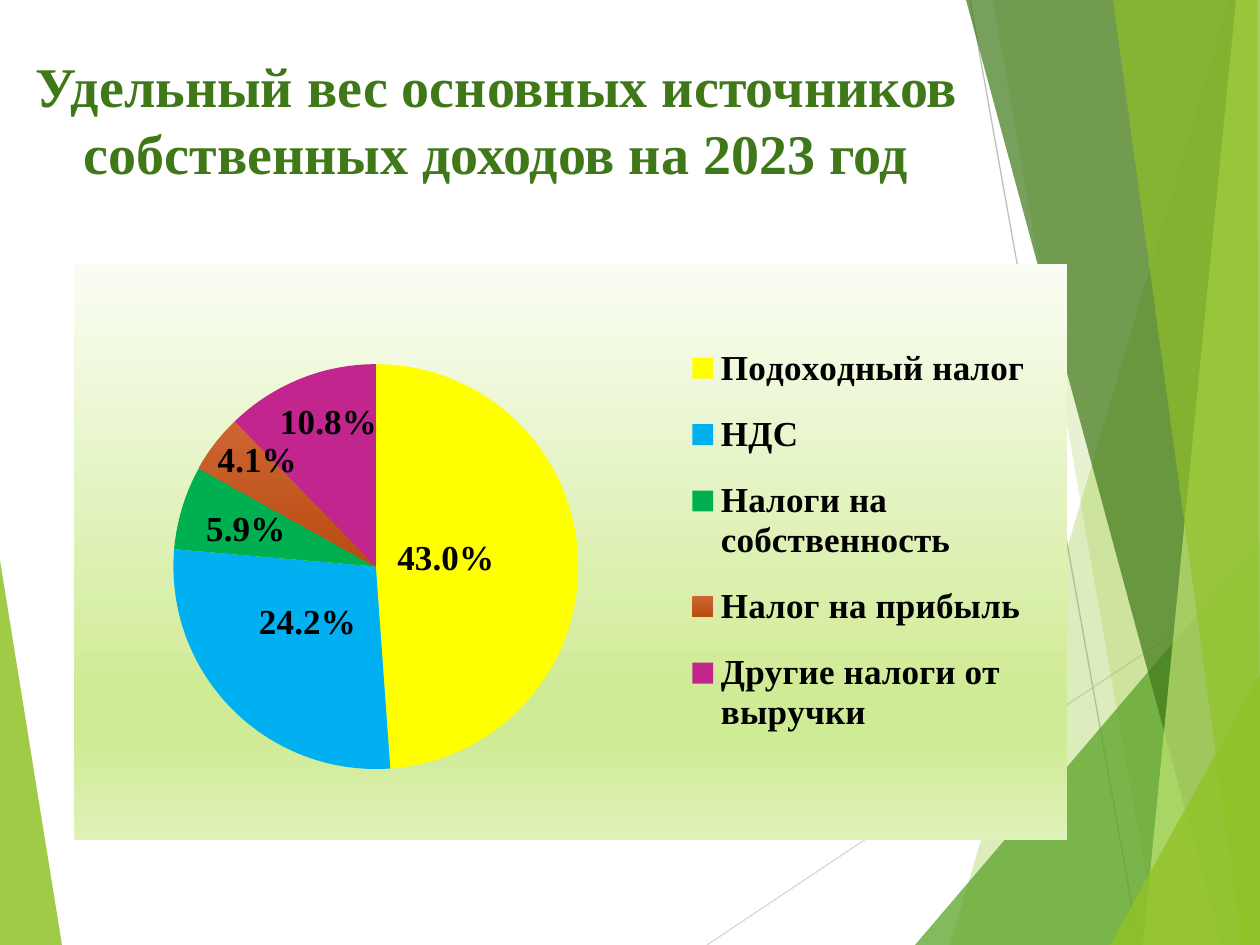
from lxml import etree
from pptx import Presentation
from pptx.chart.data import CategoryChartData
from pptx.dml.color import RGBColor
from pptx.enum.chart import XL_CHART_TYPE, XL_LABEL_POSITION, XL_LEGEND_POSITION
from pptx.enum.text import MSO_ANCHOR, MSO_AUTO_SIZE, PP_ALIGN
from pptx.oxml import parse_xml
from pptx.oxml.ns import nsdecls, qn
from pptx.util import Pt

PX = 914400 / 126
WIDTH, HEIGHT = 1260, 945
SERIF = "Times New Roman"
BODY_FONT = "Karla"

BLACK = RGBColor(0, 0, 0)
DARK_GREEN = RGBColor(0x3F, 0x78, 0x19)
LIME = RGBColor(0x90, 0xC2, 0x26)
GREEN = RGBColor(0x54, 0xA0, 0x21)
PALE_LIME = RGBColor(0xC0, 0xE4, 0x74)
LIGHT_GRAY = RGBColor(0xD9, 0xD9, 0xD9)
GRAY = RGBColor(0xBF, 0xBF, 0xBF)
YELLOW = RGBColor(0xFF, 0xFF, 0x00)
BLUE = RGBColor(0x00, 0xB0, 0xF0)
EMERALD = RGBColor(0x00, 0xB0, 0x50)
ORANGE = RGBColor(0xCD, 0x65, 0x34)
RUST = RGBColor(0xB8, 0x4D, 0x0F)
MAGENTA = RGBColor(0xC3, 0x25, 0x8E)
PANEL_STOPS = [
    (0, RGBColor(0xFA, 0xFD, 0xF3)),
    (74, RGBColor(0xD0, 0xEB, 0x96)),
    (83, RGBColor(0xD0, 0xEB, 0x96)),
    (100, RGBColor(0xDF, 0xF1, 0xB9)),
]

# Lines: start, end, colour
RAYS = [
    ((707, 945), (1260, 576), LIGHT_GRAY),
    ((970, 0), (1139, 945), GRAY),
]
# Facets: corners, colour, opacity in percent
FACETS = [
    ([(0, 560), (62, 945), (0, 945)], LIME, 85),
    ([(1229, 0), (950, 945), (1260, 945), (1260, 0)], LIME, 30),
    ([(993, 0), (1158, 945), (1260, 945), (1260, 0)], LIME, 20),
    ([(915, 945), (1260, 541), (1260, 945)], GREEN, 72),
    ([(966, 0), (1222, 945), (1260, 945), (1260, 0)], DARK_GREEN, 70),
    ([(1236, 0), (1143, 945), (1260, 945), (1260, 0)], PALE_LIME, 70),
    ([(1113, 0), (1242, 945), (1260, 945), (1257, 0)], LIME, 65),
    ([(1110, 945), (1260, 674), (1260, 945)], LIME, 80),
]
# Taxes: name, share, slice colours, label shift in pixels
TAXES = [
    ("Подоходный налог", 0.43, [YELLOW], (-31, -4)),
    ("НДС", 0.242, [BLUE], (4, -15)),
    ("Налоги на собственность", 0.059, [EMERALD], (-33, -7)),
    ("Налог на прибыль", 0.041, [ORANGE, RUST], (-38, -44)),
    ("Другие налоги от выручки", 0.108, [MAGENTA], (-9, -50)),
]
PANEL = (74, 264, 993, 576)


def emu(pixels):
    """Turn pixels into EMU."""
    return round(pixels * PX)


def format_font(font, size, name=SERIF, color=BLACK, bold=True):
    """Set the look of a font."""
    font.size, font.name, font.bold = Pt(size), name, bold
    font.color.rgb = color


def write_text(frame, text, align=PP_ALIGN.CENTER, anchor=MSO_ANCHOR.TOP, **font):
    """Put one formatted paragraph into a text frame."""
    frame.word_wrap = True
    frame.auto_size = MSO_AUTO_SIZE.NONE
    frame.vertical_anchor = anchor
    paragraph = frame.paragraphs[0]
    paragraph.alignment = align
    run = paragraph.add_run()
    run.text = text
    format_font(run.font, **font)


def add_ray(slide, start, end, color):
    """Draw a thin straight line."""
    ray = slide.shapes.add_connector(1, *map(emu, start + end))
    ray.line.color.rgb = color
    ray.line.width = Pt(0.75)
    etree.SubElement(ray.element.spPr, qn("a:effectLst"))


def add_facet(slide, corners, color, opacity):
    """Draw a translucent polygon."""
    builder = slide.shapes.build_freeform(*corners[0], scale=PX)
    builder.add_line_segments(corners[1:], close=True)
    facet = builder.convert_to_shape()
    facet.shadow.inherit = False
    facet.line.fill.background()
    facet.fill.solid()
    facet.fill.fore_color.rgb = color
    tint = facet.element.spPr.find(".//" + qn("a:srgbClr"))
    etree.SubElement(tint, qn("a:alpha"), val=str(opacity * 1000))


def fill_panel(chart, stops):
    """Give the chart area a vertical gradient and no border."""
    marks = "".join(
        f'<a:gs pos="{pos * 1000}"><a:srgbClr val="{color}"/></a:gs>'
        for pos, color in stops
    )
    area = parse_xml(
        f'<c:spPr {nsdecls("c", "a")}><a:gradFill><a:gsLst>{marks}</a:gsLst>'
        '<a:lin ang="5400000" scaled="0"/></a:gradFill>'
        "<a:ln><a:noFill/></a:ln></c:spPr>"
    )
    chart.element.find(qn("c:chart")).addnext(area)


def place(parent, after, edge=False, inner=False, **fractions):
    """Set a manual layout right after the named child of a chart part."""
    for old in parent.findall(qn("c:layout")):
        parent.remove(old)
    rules = '<c:layoutTarget val="inner"/>' if inner else ""
    if edge:
        rules += '<c:xMode val="edge"/><c:yMode val="edge"/>'
    rules += "".join(f'<c:{k} val="{v:.4f}"/>' for k, v in fractions.items())
    layout = parse_xml(
        f'<c:layout {nsdecls("c")}><c:manualLayout>{rules}'
        "</c:manualLayout></c:layout>"
    )
    if after is None:
        parent.insert(0, layout)
    else:
        parent.find(qn(after)).addnext(layout)


def paint_slice(fill, colors):
    """Fill a slice with one colour or a downward gradient of two."""
    if len(colors) == 1:
        fill.solid()
        fill.fore_color.rgb = colors[0]
        return
    fill.gradient()
    fill.gradient_angle = 270
    for stop, color in zip(fill.gradient_stops, colors):
        stop.color.rgb = color


def add_tax_pie(slide):
    """Add the pie of tax shares with its legend."""
    data = CategoryChartData(number_format="0.0%")
    data.categories = [tax[0] for tax in TAXES]
    data.add_series("Series 1", [tax[1] for tax in TAXES])
    frame = slide.shapes.add_chart(XL_CHART_TYPE.PIE, *map(emu, PANEL), data)
    chart = frame.chart
    chart.has_title = False
    format_font(chart.font, 18, name=BODY_FONT, bold=False)
    fill_panel(chart, PANEL_STOPS)

    chart.has_legend = True
    legend = chart.legend
    legend.position = XL_LEGEND_POSITION.RIGHT
    legend.include_in_layout = False
    format_font(legend.font, 20)
    place(legend._element, "c:legendPos", edge=True, x=0.6, y=0.1, w=0.38, h=0.76)
    plot_area = chart.element.find(".//" + qn("c:plotArea"))
    place(plot_area, None, edge=True, inner=True, x=0.1, y=0.174, w=0.408, h=0.703)

    plot = chart.plots[0]
    plot.vary_by_categories = True
    plot.has_data_labels = True
    labels = plot.series[0].data_labels
    labels.show_value = True
    labels.show_percentage = False
    labels.number_format = "0.0%"
    labels.number_format_is_linked = False
    labels.position = XL_LABEL_POSITION.CENTER
    format_font(labels.font, 20)
    for index, (_, _, colors, (dx, dy)) in enumerate(TAXES):
        point = plot.series[0].points[index]
        paint_slice(point.format.fill, colors)
        point.format.line.fill.background()
        point.data_label.position = XL_LABEL_POSITION.CENTER
        format_font(point.data_label.font, 20)
        label = labels._element.findall(qn("c:dLbl"))[index]
        place(label, "c:idx", x=dx / PANEL[2], y=dy / PANEL[3])
        label.find(qn("c:showVal")).set("val", "1")
        label.find(qn("c:showPercent")).set("val", "0")


def main():
    """Build the slide and save it."""
    deck = Presentation()
    deck.slide_width, deck.slide_height = emu(WIDTH), emu(HEIGHT)
    slide = deck.slides.add_slide(deck.slide_layouts[5])
    for facet in FACETS[:1]:
        add_facet(slide, *facet)
    for ray in RAYS:
        add_ray(slide, *ray)
    for facet in FACETS[1:]:
        add_facet(slide, *facet)
    title = slide.shapes.title
    title.left, title.top, title.width, title.height = map(emu, (-44, 45, 1081, 189))
    write_text(
        title.text_frame,
        "Удельный вес основных источников собственных доходов на 2023 год",
        size=32,
        color=DARK_GREEN,
    )
    add_tax_pie(slide)
    deck.save("out.pptx")


main()
